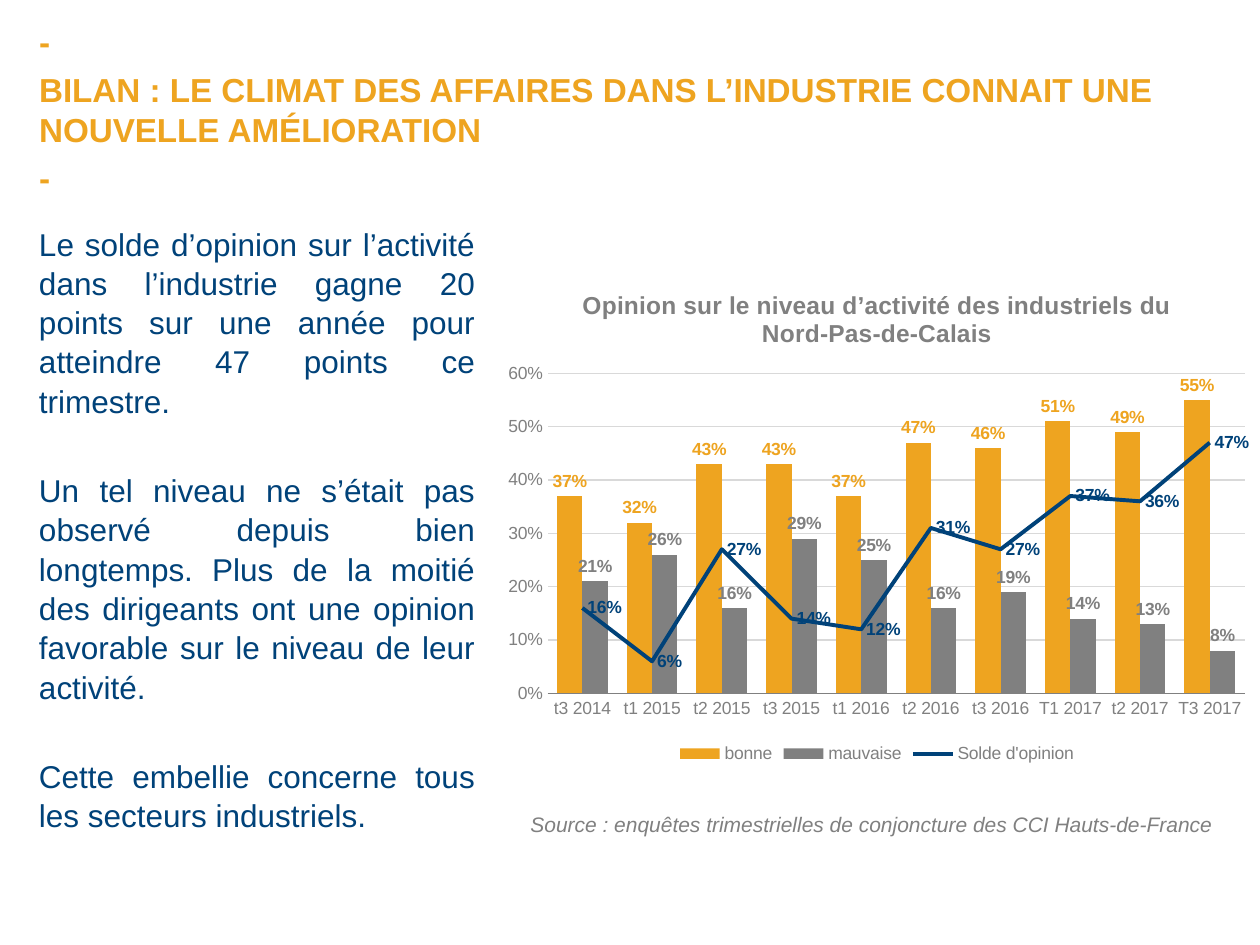
from lxml import etree
from pptx import Presentation
from pptx import util as u
from pptx.chart.data import CategoryChartData
from pptx.dml.color import RGBColor
from pptx.enum import chart as charts, text
from pptx.oxml import parse_xml
from pptx.oxml.ns import nsdecls, qn

ORANGE, GREY, NAVY = "EEA420", "808080", "004279"


def paint(font, color, size, bold=False, italic=False):
    font.name = "Arial"
    font.size = u.Pt(size)
    font.bold = bold
    font.italic = italic
    font.color.rgb = RGBColor.from_string(color)


def add_text(page, place, lines, color, size, gaps, **style):
    box = page.shapes.add_textbox(*[u.Inches(n) for n in place])
    frame = box.text_frame
    frame.word_wrap = True
    frame.margin_left = frame.margin_right = 0
    frame.margin_top = frame.margin_bottom = 0
    for number, (line, gap) in enumerate(zip(lines, gaps)):
        para = frame.paragraphs[0] if number == 0 else frame.add_paragraph()
        para.space_before = u.Pt(gap)
        span = para.add_run()
        span.text = line
        paint(span.font, color, size, **style)
    return frame


deck = Presentation()
deck.slide_width = u.Inches(10)
deck.slide_height = u.Inches(7.5)
page = deck.slides.add_slide(deck.slide_layouts[6])

heading = "BILAN : LE CLIMAT DES AFFAIRES DANS L’INDUSTRIE CONNAIT UNE NOUVELLE AMÉLIORATION"
add_text(page, (0.31, 0.17, 9.69, 1.04), ["-", heading, "-"], ORANGE, 19, (0, 4.5, 4.5), bold=True)

comments = [
    "Le solde d’opinion sur l’activité dans l’industrie gagne 20 points sur une année pour atteindre 47 points ce trimestre.",
    "Un tel niveau ne s’était pas observé depuis bien longtemps. Plus de la moitié des dirigeants ont une opinion favorable sur le niveau de leur activité.",
    "Cette embellie concerne tous les secteurs industriels.",
]
body = add_text(page, (0.31, 1.77, 3.46, 5.28), comments, NAVY, 18, (0, 28.7, 28.7))
for para in body.paragraphs:
    para.alignment = text.PP_ALIGN.JUSTIFY
    para.line_spacing = 1.04

source = "Source : enquêtes trimestrielles de conjoncture des CCI Hauts-de-France"
add_text(page, (4.21, 6.44, 5.6, 0.2), [source], GREY, 12, (0,), italic=True)

data = CategoryChartData(number_format="0%")
data.categories = ["t3 2014", "t1 2015", "t2 2015", "t3 2015", "t1 2016",
                   "t2 2016", "t3 2016", "T1 2017", "t2 2017", "T3 2017"]
data.add_series("bonne", (0.37, 0.32, 0.43, 0.43, 0.37, 0.47, 0.46, 0.51, 0.49, 0.55))
data.add_series("mauvaise", (0.21, 0.26, 0.16, 0.29, 0.25, 0.16, 0.19, 0.14, 0.13, 0.08))
data.add_series("Solde d'opinion", (0.16, 0.06, 0.27, 0.14, 0.12, 0.31, 0.27, 0.37, 0.36, 0.47))
place = [u.Inches(n) for n in (3.92, 2.13, 6.08, 3.97)]
chart = page.shapes.add_chart(charts.XL_CHART_TYPE.COLUMN_CLUSTERED, *place, data).chart
paint(chart.font, GREY, 10)

title = chart.chart_title.text_frame
span = title.paragraphs[0].add_run()
span.text = "Opinion sur le niveau d’activité des industriels du Nord-Pas-de-Calais"
paint(span.font, GREY, 14, bold=True)
chart.chart_title.include_in_layout = False

chart.has_legend = True
chart.legend.position = charts.XL_LEGEND_POSITION.BOTTOM
chart.legend.include_in_layout = False
paint(chart.legend.font, GREY, 10)

for axis in (chart.category_axis, chart.value_axis):
    axis.major_tick_mark = axis.minor_tick_mark = charts.XL_TICK_MARK.NONE
    paint(axis.tick_labels.font, GREY, 10)
chart.category_axis.format.line.color.rgb = RGBColor.from_string(GREY)
values = chart.value_axis
values.minimum_scale, values.maximum_scale, values.major_unit = 0, 0.6, 0.1
values.tick_labels.number_format = "0%"
values.tick_labels.number_format_is_linked = False
values.format.line.fill.background()
grid = values.major_gridlines.format.line
grid.width = u.Pt(0.75)
grid.color.rgb = RGBColor.from_string("D9D9D9")

columns = chart.plots[0]
columns.gap_width = 75
columns.overlap = 0
columns.vary_by_categories = False
column_xml = chart._chartSpace.find(".//" + qn("c:barChart"))
line_xml = parse_xml(
    f'<c:lineChart {nsdecls("c")}><c:grouping val="standard"/><c:varyColors val="0"/>'
    '<c:marker val="1"/></c:lineChart>')
balance = column_xml.findall(qn("c:ser"))[2]
for flag in balance.findall(qn("c:invertIfNegative")):
    balance.remove(flag)
line_xml.insert(2, balance)
for axis_id in column_xml.findall(qn("c:axId")):
    etree.SubElement(line_xml, qn("c:axId")).set("val", axis_id.get("val"))
column_xml.addnext(line_xml)

above, right = charts.XL_LABEL_POSITION.OUTSIDE_END, charts.XL_LABEL_POSITION.RIGHT
all_series = [series for plot in chart.plots for series in plot.series]
for series, color, position in zip(all_series, (ORANGE, GREY, NAVY), (above, above, right)):
    labels = series.data_labels
    labels.show_value = True
    labels.number_format = "0%"
    labels.number_format_is_linked = False
    labels.position = position
    paint(labels.font, color, 10, bold=True)
    if position == above:
        series.invert_if_negative = False
        series.format.fill.solid()
        series.format.fill.fore_color.rgb = RGBColor.from_string(color)
    else:
        series.smooth = False
        series.marker.style = charts.XL_MARKER_STYLE.NONE
        series.format.line.width = u.Pt(2.25)
        series.format.line.color.rgb = RGBColor.from_string(color)

plot_area = chart._chartSpace.find(".//" + qn("c:plotArea"))
for old in plot_area.findall(qn("c:layout")):
    plot_area.remove(old)
layout = parse_xml(
    f'<c:layout {nsdecls("c")}><c:manualLayout><c:layoutTarget val="inner"/>'
    '<c:xMode val="edge"/><c:yMode val="edge"/><c:x val="0.07"/><c:y val="0.21"/>'
    '<c:w val="0.91"/><c:h val="0.64"/></c:manualLayout></c:layout>')
plot_area.insert(0, layout)

deck.save("out.pptx")
